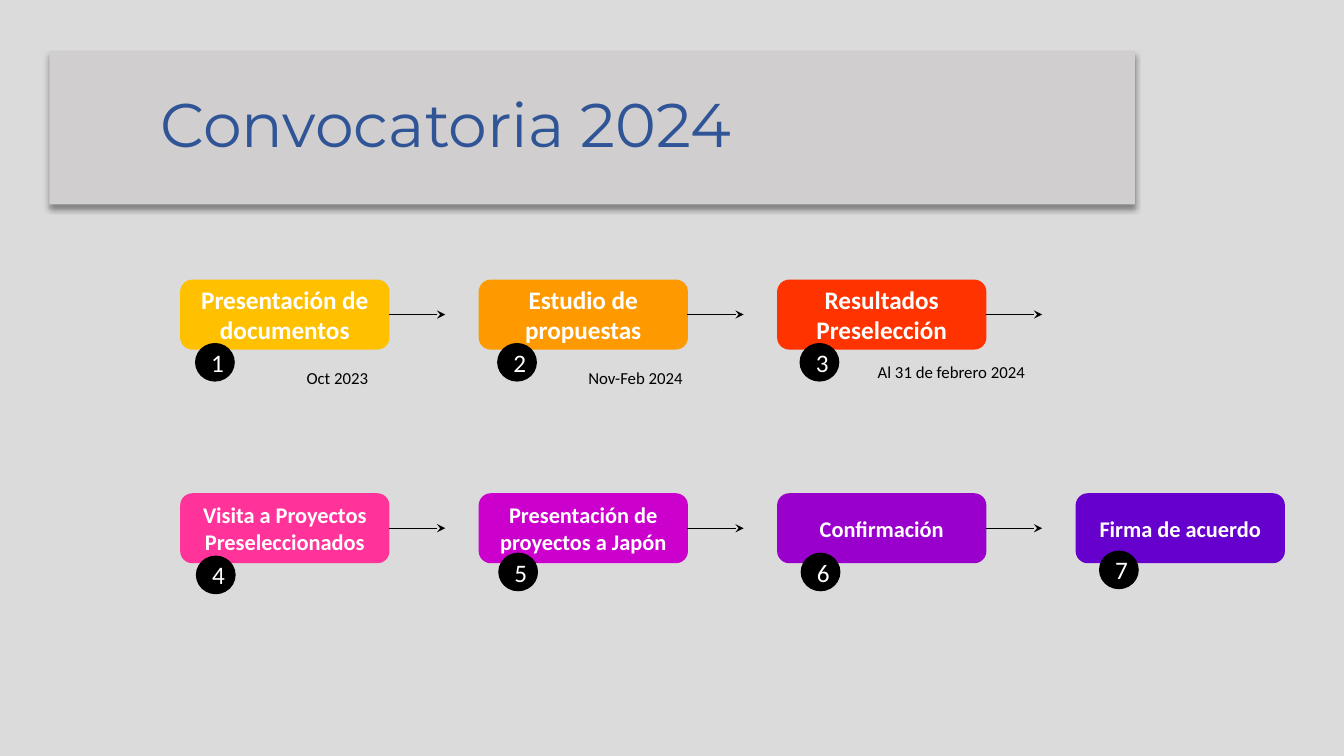
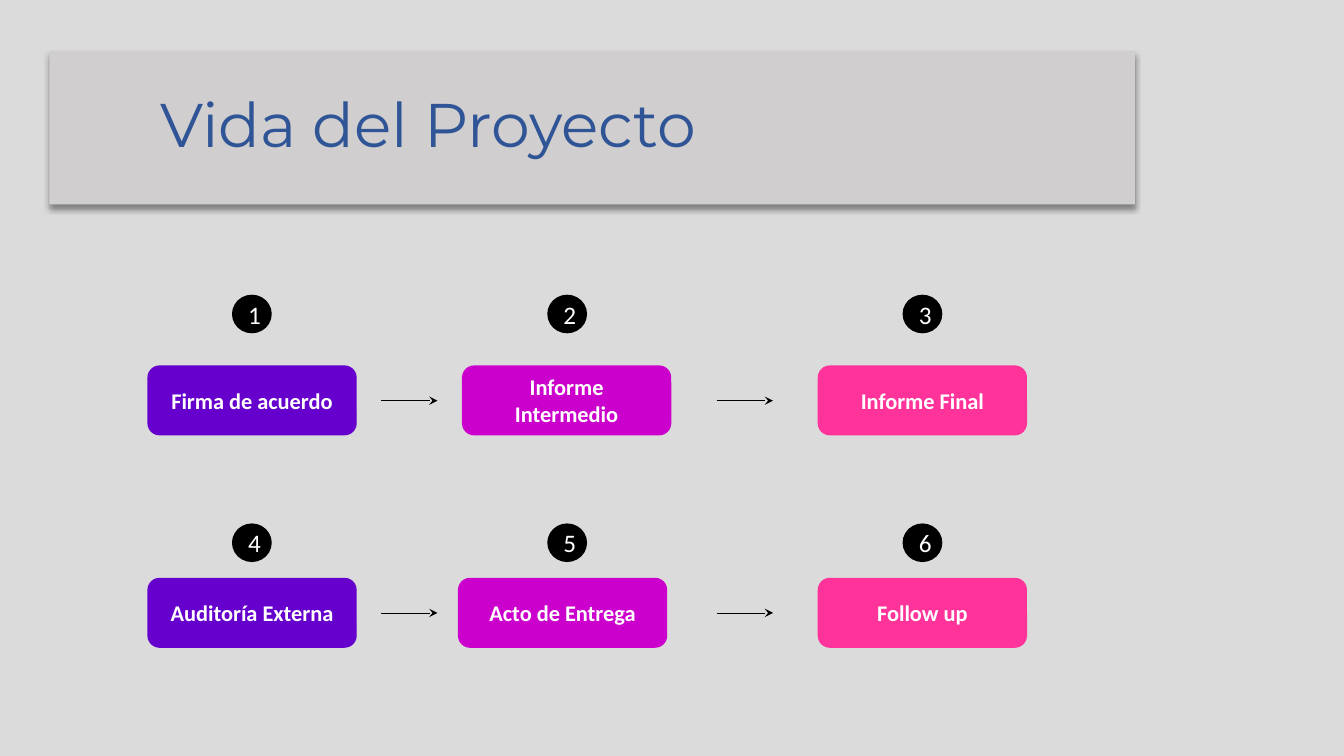
from lxml import etree
from pptx import Presentation
from pptx.dml.color import RGBColor
from pptx.enum.shapes import MSO_CONNECTOR, MSO_SHAPE
from pptx.enum.text import MSO_ANCHOR, MSO_AUTO_SIZE, PP_ALIGN
from pptx.oxml import parse_xml
from pptx.oxml.ns import nsdecls, qn
from pptx.util import Pt

STRAIGHT = MSO_CONNECTOR.STRAIGHT
ROUNDED, OVAL = MSO_SHAPE.ROUNDED_RECTANGLE, MSO_SHAPE.OVAL
MIDDLE = MSO_ANCHOR.MIDDLE
NO_FIT = MSO_AUTO_SIZE.NONE
LEFT, CENTER = PP_ALIGN.LEFT, PP_ALIGN.CENTER
RIGHT_SIDE = 3

COLORS = {
    "background": "DBDBDB", "band": "D0CECE", "title": "2F5597",
    "black": "000000", "white": "FFFFFF",
    "yellow": "FFC000", "orange": "FF9900", "red": "FF3300",
    "pink": "FF3399", "magenta": "CC00CC", "purple": "9900CC", "violet": "6600CC",
}
BODY_FONT, TITLE_FONT = "Calibri", "Montserrat"
BOX_W, BOX_H = 148.5, 49
BADGE_W, BADGE_H = 27.4, 26.6
ARROW_W = 40.3


class Deck:
    """Hold the presentation style and draw on the current slide."""

    def __init__(self):
        self.prs = Presentation()
        self.prs.slide_width, self.prs.slide_height = Pt(960), Pt(540)
        self.fill(self.prs.slide_master.background, "background")

    def fill(self, target, color):
        target.fill.solid()
        target.fill.fore_color.rgb = RGBColor.from_string(COLORS[color])

    def text(self, sp, text, size, color, bold=False, font=BODY_FONT, align=CENTER):
        tf = sp.text_frame
        tf.word_wrap = True
        tf.text = text
        p = tf.paragraphs[0]
        p.alignment = align
        p.font.name, p.font.size, p.font.bold = font, Pt(size), bold
        p.font.color.rgb = RGBColor.from_string(COLORS[color])
        return p

    def new_slide(self, title):
        self.slide = self.prs.slides.add_slide(self.prs.slide_layouts[5])
        sp = self.slide.shapes.title
        sp.left, sp.top, sp.width, sp.height = Pt(35.3), Pt(36.7), Pt(775.4), Pt(109.4)
        self.fill(sp, "band")
        p = self.text(sp, title, 44, "title", font=TITLE_FONT, align=LEFT)
        p.line_spacing = 0.9
        pPr = p._p.get_or_add_pPr()
        pPr.set("marL", str(Pt(72)))
        pPr.set("indent", "0")
        sp.text_frame.auto_size = NO_FIT
        sp.text_frame.vertical_anchor = MIDDLE
        sp.shadow.inherit = False
        sp._element.spPr.find(qn("a:effectLst")).append(parse_xml(
            f'<a:outerShdw {nsdecls("a")} blurRad="{Pt(4)}" dist="{Pt(3)}" dir="5400000" '
            f'rotWithShape="0"><a:srgbClr val="{COLORS["black"]}"><a:alpha val="40000"/>'
            '</a:srgbClr></a:outerShdw>'))

    def shape(self, kind, x, y, w, h, color, text, size, bold):
        sp = self.slide.shapes.add_shape(kind, Pt(x), Pt(y), Pt(w), Pt(h))
        sp.shadow.inherit = False
        self.fill(sp, color)
        self.fill(sp.line, color)
        sp.line.width = Pt(1)
        sp.text_frame.vertical_anchor = MIDDLE
        self.text(sp, text, size, "white", bold)
        return sp

    def box(self, x, y, color, text, size=16):
        return self.shape(ROUNDED, x, y, BOX_W, BOX_H, color, text, size, True)

    def badge(self, x, y, number):
        self.shape(OVAL, x, y, BADGE_W, BADGE_H, "black", str(number), 18, False)

    def arrow(self, x, y, source=None):
        line = self.slide.shapes.add_connector(
            STRAIGHT, Pt(x), Pt(y), Pt(x + ARROW_W), Pt(y))
        if source is not None:
            line.begin_connect(source, RIGHT_SIDE)
        self.fill(line.line, "black")
        line.line.width = Pt(0.5)
        spPr = line._element.spPr
        etree.SubElement(spPr.find(qn("a:ln")), qn("a:tailEnd")).set("type", "stealth")
        etree.SubElement(spPr, qn("a:effectLst"))

    def date(self, x, y, text):
        sp = self.slide.shapes.add_textbox(Pt(x), Pt(y), Pt(200), Pt(36))
        self.text(sp, text, 12, "black")


def build_call(deck):
    """Draw the seven steps of the call."""
    deck.new_slide("Convocatoria 2024")
    rows = [
        (200.2, 18, [
            ("Presentación de documentos", "yellow", 139.8, 245.5),
            ("Estudio de propuestas", "orange", 355.6, 245.5),
            ("Resultados Preselección", "red", 571.6, 245.5)]),
        (352.8, 16, [
            ("Visita a Proyectos Preseleccionados", "pink", 140.4, 397.4),
            ("Presentación de proyectos a Japón", "magenta", 356.4, 395.3),
            ("Confirmación", "purple", 572.4, 395.3),
            ("Firma de acuerdo", "violet", 785.5, 393.8)]),
    ]
    number = 0
    for y, size, steps in rows:
        for col, (text, color, badge_x, badge_y) in enumerate(steps):
            number += 1
            x = 129.2 + 213.2 * col
            sp = deck.box(x, y, color, text, size)
            if col < 3:
                deck.arrow(x + BOX_W, y + BOX_H / 2, sp)
            deck.badge(badge_x, badge_y, number)
    deck.date(141, 259.2, "Oct 2023")
    deck.date(354, 259.2, "Nov-Feb 2024")
    deck.date(579.6, 254.9, "Al 31 de febrero 2024")


def build_life(deck):
    """Draw the six steps of the project's life."""
    deck.new_slide("Vida del Proyecto")
    colors = ["violet", "magenta", "pink"]
    badge_xs = [166.2, 391.4, 645.2]
    rows = [
        (261.5, 211, 286.2, [105.8, 330.5, 584.6],
         ["Firma de acuerdo", "Informe Intermedio", "Informe Final"]),
        (413.2, 374.4, 437.8, [105.8, 327.6, 584.6],
         ["Auditoría Externa", "Acto de Entrega", "Follow up"]),
    ]
    number = 0
    for y, badge_y, arrow_y, xs, texts in rows:
        for x, badge_x, color, text in zip(xs, badge_xs, colors, texts):
            number += 1
            deck.box(x, y, color, text)
            deck.badge(badge_x, badge_y, number)
        for arrow_x in (272.2, 511.9):
            deck.arrow(arrow_x, arrow_y)


def main():
    """Build and save the presentation."""
    deck = Deck()
    build_call(deck)
    build_life(deck)
    deck.prs.save("out.pptx")


if __name__ == "__main__":
    main()
